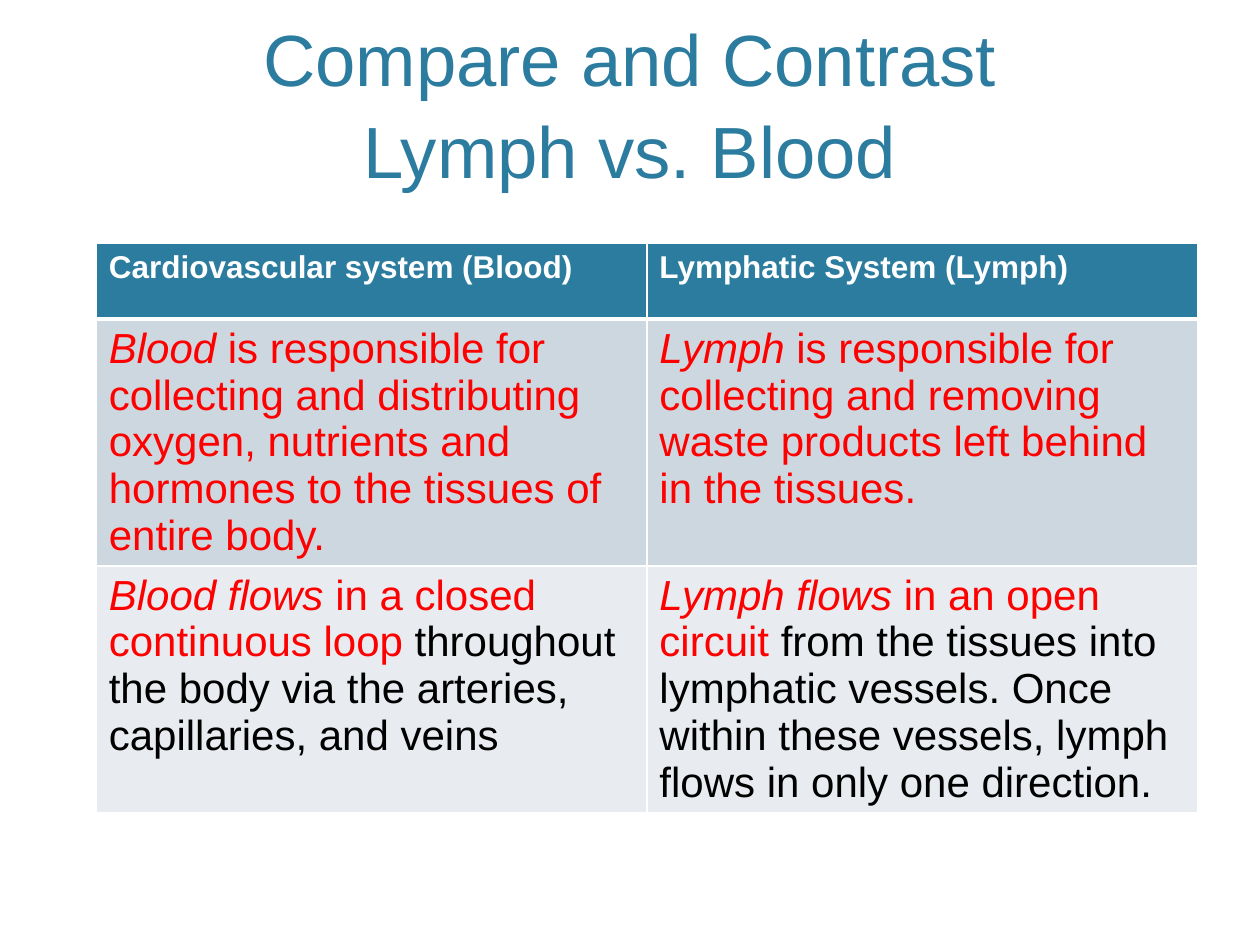
from pptx import Presentation
from pptx.dml.color import RGBColor
from pptx.enum.text import MSO_ANCHOR, PP_ALIGN
from pptx.oxml import parse_xml
from pptx.oxml.ns import nsdecls
from pptx.util import Cm, Pt

TEAL = RGBColor(0x2C, 0x7C, 0x9F)
WHITE = RGBColor(0xFF, 0xFF, 0xFF)
RED = RGBColor(0xFF, 0x00, 0x00)
BLACK = RGBColor(0x00, 0x00, 0x00)
MIST = RGBColor(0xCD, 0xD7, 0xDF)
PALE = RGBColor(0xE8, 0xEC, 0xF0)
FONT = "Arial"

TITLE_LINES = ["Compare and Contrast", "Lymph vs. Blood"]
HEADERS = ["Cardiovascular system (Blood)", "Lymphatic System (Lymph)"]
COMPARISONS = [
    [
        ("Blood", " is responsible for collecting and distributing oxygen, "
                  "nutrients and hormones to the tissues of entire body.", ""),
        ("Lymph", " is responsible for collecting and removing waste products "
                  "left behind in the tissues.", ""),
    ],
    [
        ("Blood flows", " in a closed continuous loop ",
         "throughout the body via the arteries, capillaries, and veins"),
        ("Lymph flows", " in an open circuit ",
         "from the tissues into lymphatic vessels. Once within these vessels, "
         "lymph flows in only one direction."),
    ],
]
ROW_FILLS = [TEAL, MIST, PALE]
ROW_HEIGHTS = [Cm(1.52), Cm(4.95), Cm(4.95)]
COLUMN_WIDTH = Cm(11.1)


def add_span(para, text, size, color, bold=False, italic=False):
    span = para.add_run()
    span.text = text
    font = span.font
    font.name, font.size = FONT, Pt(size)
    font.bold, font.italic = bold, italic
    font.color.rgb = color


def add_borders(cell, bottom_width):
    properties = cell._tc.get_or_add_tcPr()
    widths = {"lnL": 1, "lnR": 1, "lnT": 1, "lnB": bottom_width}
    for position, (side, width) in enumerate(widths.items()):
        properties.insert(position, parse_xml(
            f'<a:{side} {nsdecls("a")} w="{Pt(width)}"><a:solidFill>'
            f'<a:srgbClr val="{WHITE}"/></a:solidFill></a:{side}>'))


def add_title(page):
    title = page.shapes.title
    title.left, title.top = Cm(1.52), Cm(0.3)
    title.width, title.height = Cm(22.35), Cm(3.71)
    frame = title.text_frame
    frame.word_wrap = True
    frame.vertical_anchor = MSO_ANCHOR.BOTTOM
    para = frame.paragraphs[0]
    para.alignment = PP_ALIGN.CENTER
    para.line_spacing = 1.05
    for index, line in enumerate(TITLE_LINES):
        if index:
            para.add_line_break()
        add_span(para, line, 41.4, TEAL)


def add_comparison(page):
    table = page.shapes.add_table(
        len(ROW_FILLS), len(HEADERS), Cm(1.94), Cm(4.91),
        COLUMN_WIDTH * len(HEADERS), sum(ROW_HEIGHTS)).table
    for column in table.columns:
        column.width = COLUMN_WIDTH
    for row, height, fill in zip(table.rows, ROW_HEIGHTS, ROW_FILLS):
        row.height = height
        for cell in row.cells:
            cell.fill.solid()
            cell.fill.fore_color.rgb = fill
            add_borders(cell, 3 if fill == TEAL else 1)
    for column, header in enumerate(HEADERS):
        add_span(table.cell(0, column).text_frame.paragraphs[0],
                 header, 18, WHITE, bold=True)
    for row, comparison in enumerate(COMPARISONS, start=1):
        for column, (subject, key_point, detail) in enumerate(comparison):
            para = table.cell(row, column).text_frame.paragraphs[0]
            add_span(para, subject, 24, RED, italic=True)
            add_span(para, key_point, 24, RED)
            if detail:
                add_span(para, detail, 24, BLACK)


def main():
    deck = Presentation()
    deck.slide_width, deck.slide_height = Cm(25.4), Cm(19.05)
    page = deck.slides.add_slide(deck.slide_layouts[5])
    add_title(page)
    add_comparison(page)
    deck.save("out.pptx")


if __name__ == "__main__":
    main()
